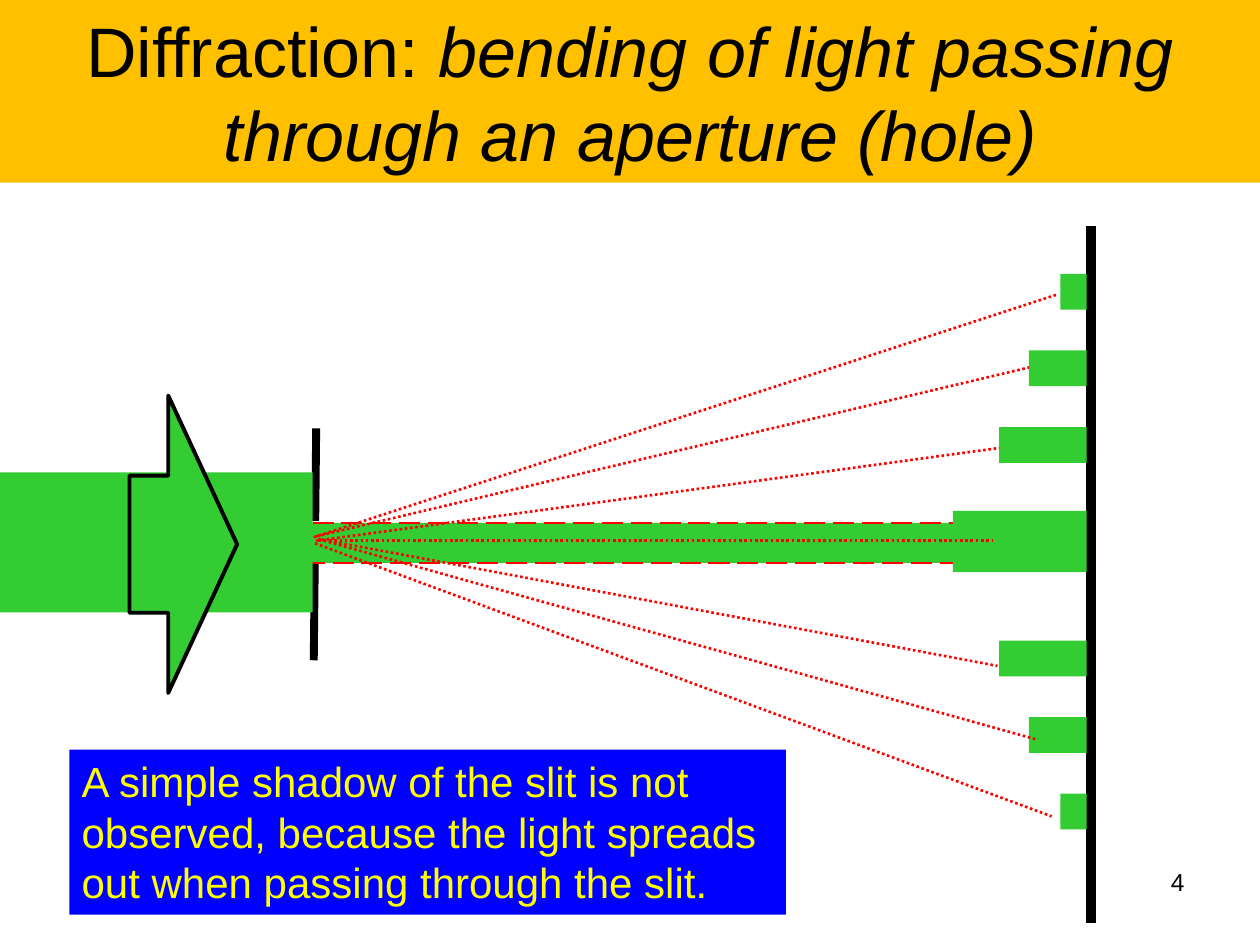
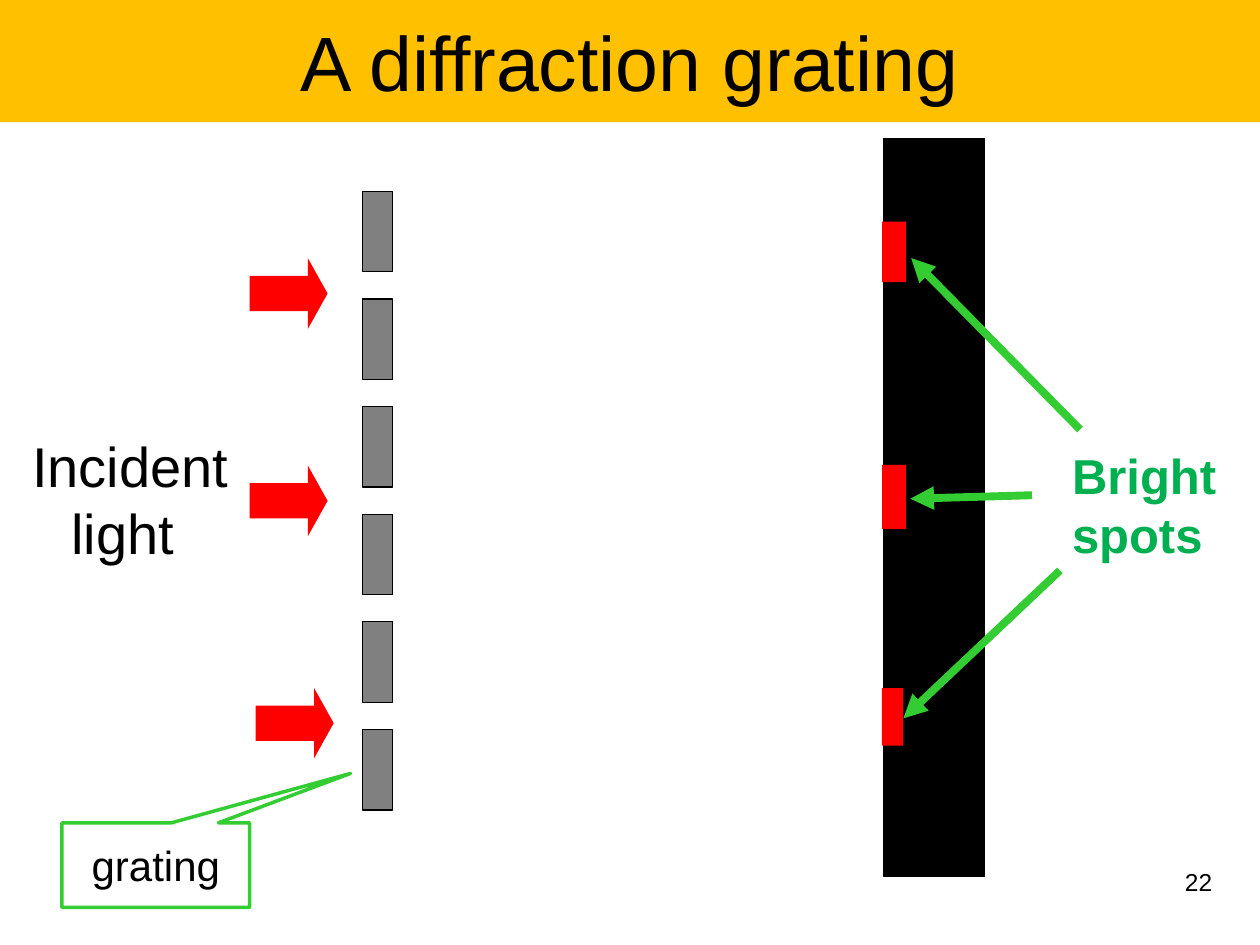
from dataclasses import dataclass
from typing import Any

from lxml.etree import SubElement
from pptx import Presentation
from pptx.dml.color import RGBColor as RGB
from pptx.enum.dml import MSO_LINE as Dash
from pptx.enum.shapes import MSO_CONNECTOR as Connector, MSO_SHAPE as Preset
from pptx.enum.text import MSO_ANCHOR as Anchor, PP_ALIGN as Align
from pptx.oxml.ns import qn
from pptx.util import Pt


@dataclass(frozen=True)
class Theme:
    font: str = "Arial"
    ink: str = "000000"
    paper: str = "FFFFFF"
    band: str = "FFC000"
    green: str = "33CC33"
    label_green: str = "00B050"
    red: str = "FF0000"
    slat: str = "808080"
    note_fill: str = "0000FF"
    note_text: str = "FFFF00"
    long_title: int = 40
    title: int = 44
    large: int = 32
    label: int = 28
    body: int = 24
    number: int = 14


THEME = Theme()


def color(value):
    return RGB.from_string(value)


@dataclass
class Box:
    """A region of a slide; parts are placed relative to its corner, in points."""
    slide: Any
    left: float
    top: float
    width: float
    height: float

    def shape(self, x, y, width, height, fill=None, line=None, weight=0.75,
              preset=Preset.RECTANGLE, adjust=()):
        part = self.slide.shapes.add_shape(
            preset, Pt(self.left + x), Pt(self.top + y), Pt(width), Pt(height))
        part.shadow.inherit = False
        for index, value in enumerate(adjust):
            part.adjustments[index] = value
        if fill:
            part.fill.solid()
            part.fill.fore_color.rgb = color(fill)
        else:
            part.fill.background()
        if line:
            part.line.color.rgb = color(line)
            part.line.width = Pt(weight)
        else:
            part.line.fill.background()
        return part

    def line(self, start, end, stroke, weight, dash=None, arrow=False):
        ends = [Pt(offset + value) for point in (start, end)
                for offset, value in zip((self.left, self.top), point)]
        part = self.slide.shapes.add_connector(Connector.STRAIGHT, *ends)
        part.line.color.rgb = color(stroke)
        part.line.width = Pt(weight)
        if dash:
            part.line.dash_style = dash
        properties = part._element.spPr
        if arrow:
            SubElement(properties.find(qn("a:ln")), qn("a:tailEnd"), type="triangle")
        SubElement(properties, qn("a:effectLst"))

    def text(self, lines, size, ink=THEME.ink, align=Align.LEFT, wrap=False,
             anchor=Anchor.TOP, fill=None, bold=False):
        part = self.slide.shapes.add_textbox(
            Pt(self.left), Pt(self.top), Pt(self.width), Pt(self.height))
        if fill:
            part.fill.solid()
            part.fill.fore_color.rgb = color(fill)
        write(part, lines, size, ink, align, wrap, anchor, bold)


def write(part, lines, size, ink, align, wrap=True, anchor=Anchor.MIDDLE, bold=False):
    """Each line is a list of (words, italic) runs or a plain string."""
    frame = part.text_frame
    frame.word_wrap = wrap
    frame.vertical_anchor = anchor
    for index, line in enumerate(lines):
        paragraph = frame.add_paragraph() if index else frame.paragraphs[0]
        paragraph.alignment = align
        paragraph.font.name = THEME.font
        paragraph.font.size = Pt(size)
        paragraph.font.bold = bold
        paragraph.font.color.rgb = color(ink)
        for words, italic in [(line, False)] if isinstance(line, str) else line:
            run = paragraph.add_run()
            run.text = words
            if italic:
                run.font.italic = True


# Shared by both slides
def title_band(box, line, size):
    box.text([line], size, align=Align.CENTER, wrap=True,
             anchor=Anchor.MIDDLE, fill=THEME.band)


def slide_number(box, number):
    box.text([number], THEME.number, align=Align.RIGHT, wrap=True)


# Single slit
def slit_barrier(box):
    box.line((0, box.height), (box.width, 0), THEME.ink, 4.5)
    box.shape(-2.2, 53.2, 5.8, 23, THEME.paper, THEME.paper)


def slit_beam(box):
    box.shape(0, 0, box.width, box.height, THEME.green)
    for x, y in ((2.9, 0), (-2.2, box.height)):
        box.line((x, y), (x + 441, y), THEME.red, 1.5, Dash.LONG_DASH)


def incoming_light(box):
    box.shape(0, 0, box.width, box.height, THEME.green)
    box.shape(74, -44, 61.5, 170, THEME.green, THEME.ink, 2.25,
              Preset.RIGHT_ARROW, (0.461, 0.64))


def fringe_screen(box):
    """A wall on the right edge, with fringes that shrink away from the axis."""
    wall = box.width
    box.line((wall, 0), (wall, box.height), THEME.ink, 6)
    box.shape(wall - 79, 163, 76.5, 35, THEME.green)
    step = 43.75
    for order, length in enumerate((50, 33, 15)):
        for y in (115 - order * step, 237 + order * step):
            box.shape(wall - 2.5 - length, y, length, 20.5, THEME.green)


def rays(box):
    """Each ray: start x and y, end x and y."""
    for x1, y1, x2, y2 in ((1.7, 141, 392, 88), (1.7, 138.5, 409, 42),
                           (3, 140, 391, 212.5), (6, 141, 413, 254.5),
                           (0.3, 139, 424.5, 0.5), (1, 142.5, 422, 298.5),
                           (3, 141, 388.5, 141)):
        box.line((x1, y1), (x2, y2), THEME.red, 1.5, Dash.ROUND_DOT)


def single_slit_slide(slide):
    title_band(Box(slide, 0, 0, 720, 104.4),
               [("Diffraction: ", False),
                ("bending of light passing through an aperture (hole)", True)],
               THEME.long_title)
    slit_barrier(Box(slide, 179.3, 244.8, 1.4, 132.5))
    slit_beam(Box(slide, 175.7, 298.8, 445, 22.9))
    incoming_light(Box(slide, 0, 270, 178.6, 80))
    fringe_screen(Box(slide, 540, 129, 83.5, 398.5))
    rays(Box(slide, 179, 168, 425, 299))
    slide_number(Box(slide, 516.2, 491.8, 167.8, 37.4), "4")
    Box(slide, 39.6, 428.4, 409.5, 94.3).text(
        ["A simple shadow of the slit is not",
         "observed, because the light spreads",
         "out when passing through the slit."],
        THEME.body, THEME.note_text, fill=THEME.note_fill)


# Diffraction grating
def grating(box, slats=6, slat_height=46):
    pitch = (box.height - slat_height) / (slats - 1)
    for index in range(slats):
        box.shape(0, index * pitch, box.width, slat_height, THEME.slat, THEME.ink)


def incident_arrows(box):
    for x, y in ((0, 0), (0, 118.5), (3.5, 245.5)):
        box.shape(x, y, 44.6, 40.3, THEME.red, preset=Preset.RIGHT_ARROW,
                  adjust=(0.5, 0.279))


def spot_screen(box):
    box.shape(0, 0, box.width, box.height, THEME.ink, THEME.ink)
    for y, width, height in ((47.5, 13.7, 34.5), (186.5, 13.7, 36.7),
                             (314, 12.2, 33)):
        box.shape(-0.7, y, width, height, THEME.red)


def spot_pointers(box):
    for start, end in (((73.5, 135.5), (4, 137.5)),
                       ((101, 98), (4.5, 0)),
                       ((89.5, 178.5), (0, 263))):
        box.line(start, end, THEME.green, 4.5, arrow=True)


def grating_callout(box):
    callout = box.shape(0, 0, box.width, box.height, None, THEME.green, 2,
                        Preset.RECTANGULAR_CALLOUT, (1.037, -1.085))
    write(callout, ["grating"], THEME.body, THEME.ink, Align.CENTER)


def grating_slide(slide):
    title_band(Box(slide, 0, 0, 720, 69.8), "A diffraction grating", THEME.title)
    grating(Box(slide, 207.2, 109.3, 17.3, 353.5))
    incident_arrows(Box(slide, 142.6, 147.6, 48, 286))
    spot_screen(Box(slide, 504.7, 79.2, 57.8, 421.5))
    Box(slide, 4.5, 243, 140, 92).text(
        ["Incident", "light "], THEME.large, align=Align.CENTER, wrap=True)
    Box(slide, 605.5, 251.3, 98, 75.6).text(
        ["Bright", "spots"], THEME.label, THEME.label_green, bold=True)
    spot_pointers(Box(slide, 516.2, 147.5, 101, 263))
    slide_number(Box(slide, 532, 491.8, 167.8, 37.4), "22")
    grating_callout(Box(slide, 35.4, 470.2, 107.3, 48.3))


def main():
    deck = Presentation()
    deck.slide_width, deck.slide_height = Pt(720), Pt(540)
    blank = deck.slide_layouts[6]
    for build in (single_slit_slide, grating_slide):
        build(deck.slides.add_slide(blank))
    deck.save("out.pptx")


if __name__ == "__main__":
    main()
